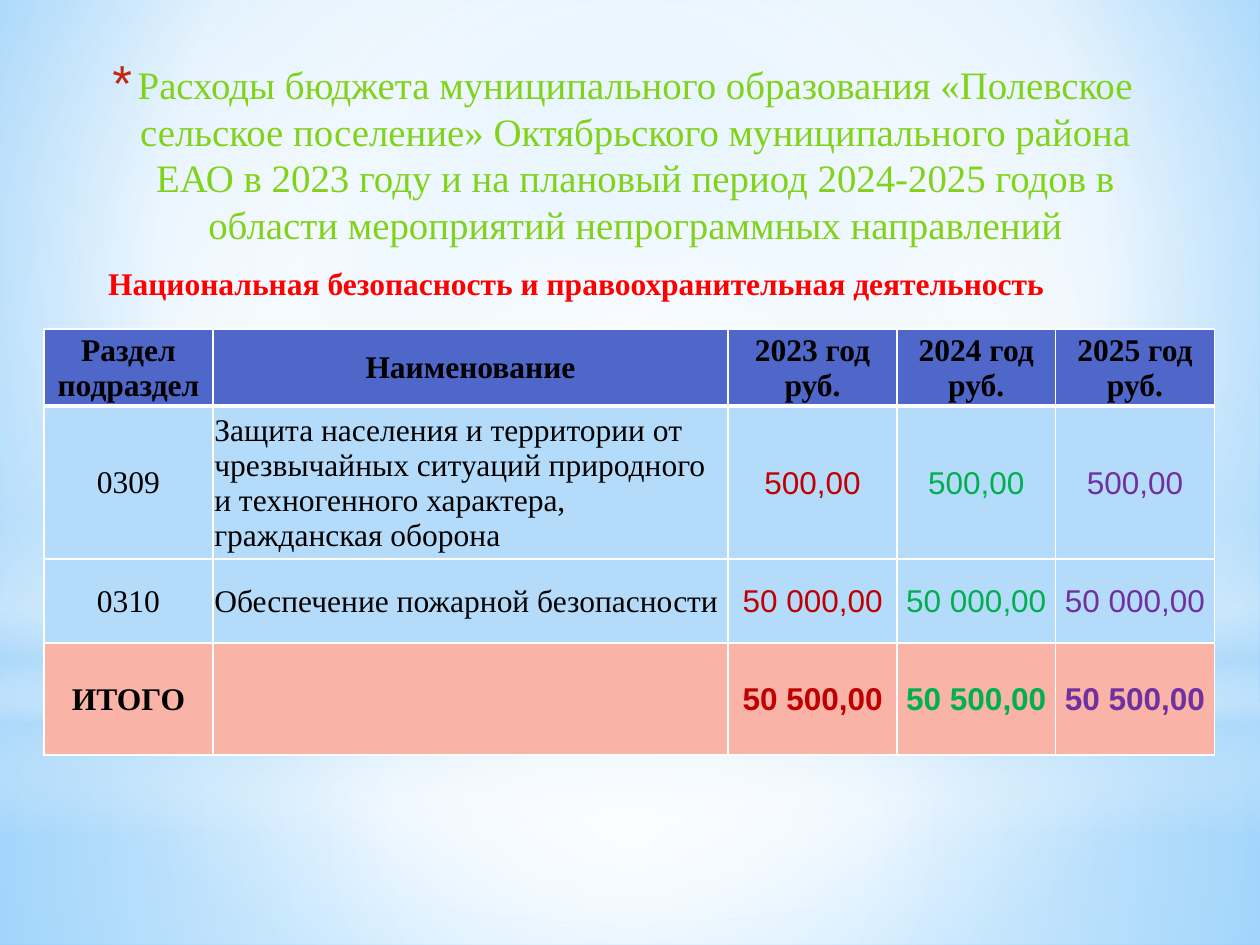
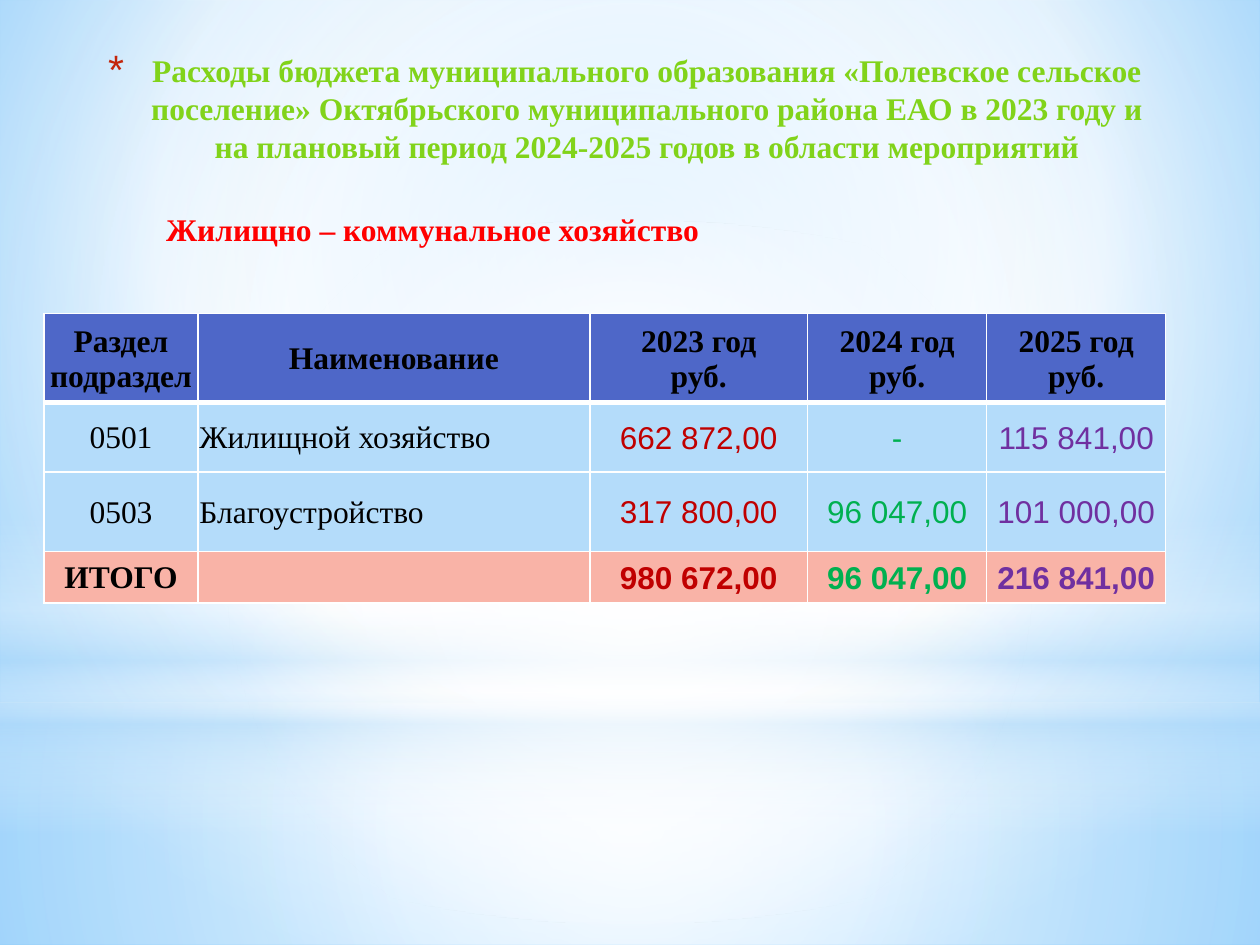
"""Build two budget expenditure slides with a shared sky background."""
from lxml import etree
from pptx import Presentation
from pptx.dml.color import RGBColor
from pptx.enum import shapes, text
from pptx.oxml import ns, parse_xml
from pptx.util import Cm, Pt

WHITE = RGBColor(0xFF, 0xFF, 0xFF)
BLACK = RGBColor(0, 0, 0)
SKY = RGBColor(0xB4, 0xDC, 0xFA)
SKY_INNER = RGBColor(0x9E, 0xD5, 0xFF)
SKY_OUTER = RGBColor(0x5B, 0xB9, 0xFF)
TITLE_GREEN = RGBColor(0x81, 0xD3, 0x1A)
BULLET_RED = RGBColor(0xC3, 0x26, 0x0C)
SECTION_RED = RGBColor(0xFF, 0, 0)
HEADER_BLUE = RGBColor(0x4E, 0x67, 0xC8)
TOTAL_PINK = RGBColor(0xF9, 0xB3, 0xA7)
YEAR_COLORS = (RGBColor(0xC0, 0, 0), RGBColor(0, 0xB0, 0x50), RGBColor(0x70, 0x30, 0xA0))
SERIF, SANS = "Times New Roman", "Arial"
CENTER_RECT = (50, 50, 50, 50)


def set_gradient(fill, element, stops, rect=None):
    """Fill with (position, colour, opacity) stops, circular around rect or else vertical."""
    stop_xml = "".join(
        f'<a:gs pos="{position * 1000}"><a:srgbClr val="{color}">'
        f'<a:alpha val="{opacity * 1000}"/></a:srgbClr></a:gs>'
        for position, color, opacity in stops)
    if rect:
        left, top, right, bottom = (side * 1000 for side in rect)
        shade = (f'<a:path path="circle"><a:fillToRect l="{left}" t="{top}" '
                 f'r="{right}" b="{bottom}"/></a:path>')
    else:
        shade = '<a:lin ang="5400000" scaled="0"/>'
    gradient = parse_xml(f'<a:gradFill {ns.nsdecls("a")} rotWithShape="1">'
                         f'<a:gsLst>{stop_xml}</a:gsLst>{shade}</a:gradFill>')
    fill.background()
    no_fill = next(element.iter(ns.qn("a:noFill")))
    no_fill.getparent().replace(no_fill, gradient)


def add_sky(master, slide):
    """Put the sky gradient and its haze shapes on the master, using slide to create them."""
    set_gradient(master.background.fill, master.element,
                 [(0, SKY_INNER, 100), (60, WHITE, 100), (100, SKY_OUTER, 100)],
                 (20, 10, 20, 60))
    rectangle, oval = shapes.MSO_SHAPE.RECTANGLE, shapes.MSO_SHAPE.OVAL
    haze = [
        (rectangle, 14.17, 4.88, [(0, WHITE, 91), (37, WHITE, 76), (100, SKY, 79)], CENTER_RECT),
        (rectangle, 0, 14.17, [(0, WHITE, 89), (48, WHITE, 62), (100, SKY, 79)], CENTER_RECT),
        (rectangle, 10.46, 6.35, [(0, WHITE, 0), (29, WHITE, 30), (45, SKY, 40),
                                  (55, WHITE, 26), (65, SKY, 60), (100, WHITE, 0)], None),
        (oval, 4.45, 14.17, [(0, WHITE, 100), (56, WHITE, 0)], CENTER_RECT),
    ]
    for index, (kind, top, height, stops, rect) in enumerate(haze):
        shape = slide.shapes.add_shape(kind, 0, Cm(top), Cm(25.4), Cm(height))
        shape.shadow.inherit = False
        set_gradient(shape.fill, shape.element, stops, rect)
        shape.line.fill.background()
        master.shapes.element.insert(2 + index, shape.element)


def add_run(paragraph, words, color, size=18, bold=True, font=SERIF):
    """Add one formatted run to a paragraph."""
    run = paragraph.add_run()
    run.text = words
    run.font.name, run.font.size, run.font.bold = font, Pt(size), bold
    run.font.color.rgb = color


def set_indent(paragraph, margin, first_line=0):
    """Set the left margin and first-line indent of a paragraph."""
    properties = paragraph._p.get_or_add_pPr()
    properties.set("marL", str(Cm(margin)))
    properties.set("indent", str(Cm(first_line)))
    return properties


def set_title(slide, words, box, size, bold, indent, space_before=0):
    """Place the title with its red asterisk bullet."""
    title = slide.shapes.title
    title.left, title.top, title.width, title.height = map(Cm, box)
    frame = title.text_frame
    frame.word_wrap = True
    frame.auto_size = text.MSO_AUTO_SIZE.NONE
    frame.vertical_anchor = text.MSO_ANCHOR.TOP
    paragraph = frame.paragraphs[0]
    paragraph.alignment = text.PP_ALIGN.CENTER
    paragraph.line_spacing = 1.0
    paragraph.space_before = Pt(space_before)
    properties = set_indent(paragraph, *indent)
    color = etree.SubElement(properties, ns.qn("a:buClr"))
    etree.SubElement(color, ns.qn("a:srgbClr"), val=str(BULLET_RED))
    etree.SubElement(properties, ns.qn("a:buSzPct"), val="130000")
    etree.SubElement(properties, ns.qn("a:buFont"), typeface=SANS)
    etree.SubElement(properties, ns.qn("a:buChar"), char="*")
    add_run(paragraph, words, TITLE_GREEN, size, bold)


def add_section_name(slide, words, box, margin=0):
    """Add the red name of the budget section."""
    frame = slide.shapes.add_textbox(*map(Cm, box)).text_frame
    frame.word_wrap = True
    paragraph = frame.paragraphs[0]
    set_indent(paragraph, margin)
    add_run(paragraph, words, SECTION_RED)


def set_borders(cell, top, bottom):
    """Draw white cell borders with the given top and bottom widths in points."""
    properties = cell._tc.get_or_add_tcPr()
    for index, (side, width) in enumerate((("L", 1), ("R", 1), ("T", top), ("B", bottom))):
        properties.insert(index, parse_xml(
            f'<a:ln{side} {ns.nsdecls("a")} w="{Pt(width)}"><a:solidFill>'
            f'<a:srgbClr val="{WHITE}"/></a:solidFill></a:ln{side}>'))


def fill_cell(cell, words, fill, color, bold, font, alignment):
    """Format one table cell and write its lines as paragraphs."""
    cell.fill.solid()
    cell.fill.fore_color.rgb = fill
    cell.vertical_anchor = text.MSO_ANCHOR.MIDDLE
    cell.margin_left = cell.margin_right = cell.margin_top = Cm(0.03)
    cell.margin_bottom = 0
    if not words:
        return
    frame = cell.text_frame
    for index, line in enumerate(words.split("\n")):
        paragraph = frame.add_paragraph() if index else frame.paragraphs[0]
        paragraph.alignment = alignment
        add_run(paragraph, line, color, bold=bold, font=font)


def add_budget_table(slide, top, widths, heights, rows):
    """Add a table with a header row, item rows and a total row."""
    table = slide.shapes.add_table(len(rows), len(widths), Cm(0.89), Cm(top),
                                   Cm(sum(widths)), Cm(sum(heights))).table
    for column, width in zip(table.columns, widths):
        column.width = Cm(width)
    last = len(rows) - 1
    for row_index, (height, values) in enumerate(zip(heights, rows)):
        table.rows[row_index].height = Cm(height)
        is_header, is_total = row_index == 0, row_index == last
        fill = HEADER_BLUE if is_header else TOTAL_PINK if is_total else SKY
        for column_index, words in enumerate(values):
            is_amount = column_index > 1 and not is_header
            is_item_name = column_index == 1 and not is_header
            cell = table.cell(row_index, column_index)
            fill_cell(cell, words, fill,
                      YEAR_COLORS[column_index - 2] if is_amount else BLACK,
                      is_header or is_total, SANS if is_amount else SERIF,
                      text.PP_ALIGN.LEFT if is_item_name else text.PP_ALIGN.CENTER)
            set_borders(cell, 3 if row_index == 1 else 1, 3 if is_header else 1)


def main():
    """Create the presentation and save it."""
    presentation = Presentation()
    presentation.slide_width, presentation.slide_height = Cm(25.4), Cm(19.05)
    layout = presentation.slide_layouts[5]
    security, housing = (presentation.slides.add_slide(layout) for _ in range(2))
    add_sky(presentation.slide_master, security)

    heading = ("Расходы бюджета муниципального образования «Полевское сельское поселение» "
               "Октябрьского муниципального района ЕАО в 2023 году и на плановый период "
               "2024-2025 годов в области мероприятий")
    header = ["Раздел подраздел", "Наименование",
              "2023 год\nруб.", "2024 год руб.", "2025 год руб."]

    set_title(security, heading + " непрограммных направлений", (1.09, 1.1, 22.81, 4.1),
              22.2, False, (0.64, -0.51), space_before=4)
    add_section_name(security, "Национальная безопасность и правоохранительная деятельность",
                     (1.7, 5.2, 20.4, 1.02), margin=0.23)
    add_budget_table(security, 6.63, (3.4, 10.39, 3.4, 3.2, 3.2), (1.52, 3, 1.7, 2.26), [
        header,
        ["0309", "Защита населения и территории от чрезвычайных ситуаций природного "
                 "и техногенного характера, гражданская оборона"] + ["500,00"] * 3,
        ["0310", "Обеспечение пожарной безопасности"] + ["50 000,00"] * 3,
        ["ИТОГО", ""] + ["50 500,00"] * 3,
    ])

    set_title(housing, heading, (1.5, 0.91, 22.2, 3.18), 18, True, (0.89, -0.89))
    add_section_name(housing, "Жилищно – коммунальное хозяйство", (3.1, 4.11, 11.46, 1.04))
    add_budget_table(housing, 6.32, (3.1, 7.9, 4.39, 3.61, 3.61), (1.8, 1.4, 1.6, 1.04), [
        header,
        ["0501", "Жилищной хозяйство", "662 872,00", "-", "115 841,00"],
        ["0503", "Благоустройство", "317 800,00", "96 047,00", "101 000,00"],
        ["ИТОГО", "", "980 672,00", "96 047,00", "216 841,00"],
    ])
    presentation.save("out.pptx")


if __name__ == "__main__":
    main()
